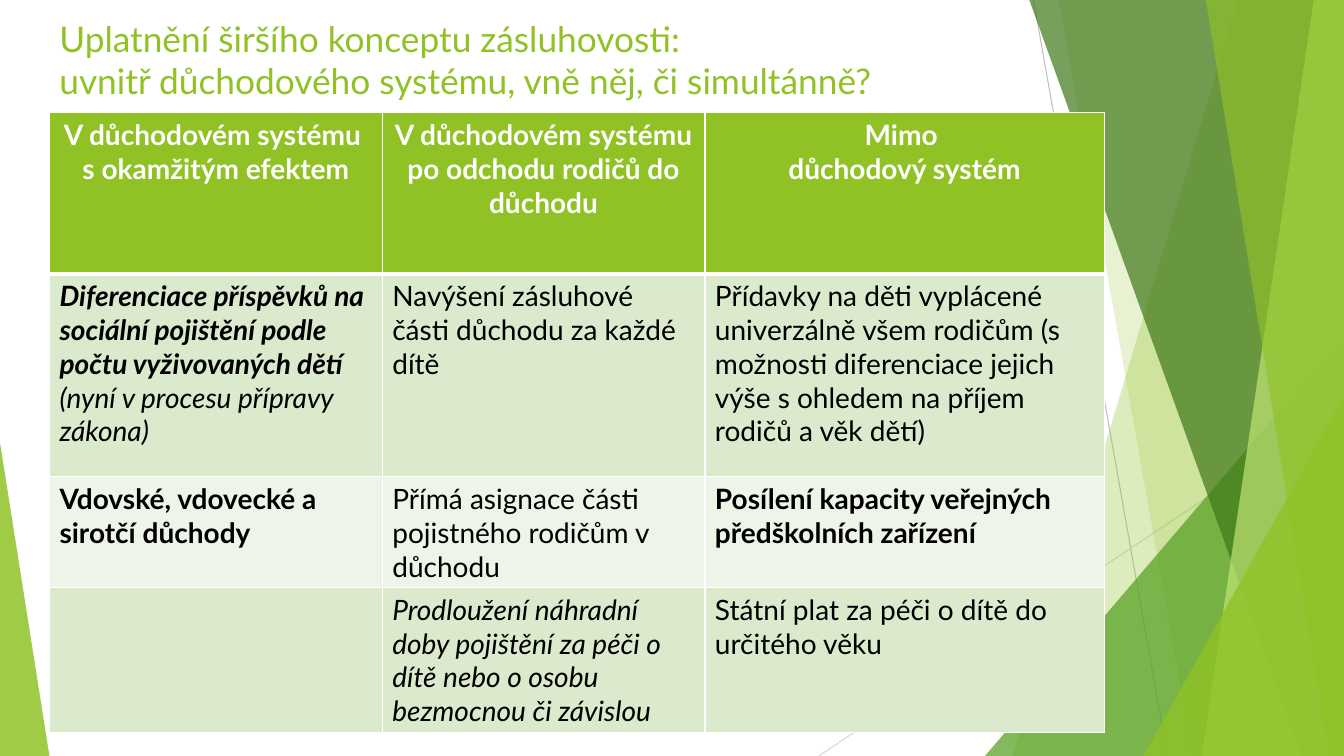
from lxml.etree import SubElement
from pptx import Presentation
from pptx.dml.color import RGBColor
from pptx.enum.shapes import MSO_CONNECTOR, MSO_SHAPE
from pptx.enum.text import MSO_ANCHOR, PP_ALIGN
from pptx.oxml import parse_xml
from pptx.oxml.ns import nsdecls, qn
from pptx.util import Inches, Pt

WIDE, HIGH = Inches(13.33), Inches(7.5)
FONT = "Lato"
HUES = {
    "lime": "90C226", "green": "54A021", "dark": "3F7819", "pale": "C0E474",
    "white": "FFFFFF", "black": "000000", "band": "DBE9CD", "light": "EEF4E8",
    "gray": "BFBFBF", "mist": "D9D9D9",
}

# Lines: from x, from y, to x, to y (percent of the slide), colour
LINES = [(76.9, 0, 86.87, 100, "gray"), (100, 53.73, 60.92, 100, "mist")]

# Shards run to the right edge: top x, bottom x, colour, opacity
BACK = [(92.12, 75.32, "lime", 30), (78.77, 88.75, "lime", 20)]
FRONT = [(76.59, 96.85, "dark", 70), (97.75, 89.42, "pale", 70),
         (89.72, 98.87, "lime", 65)]

# Table: column widths and row heights in percent of the slide
COLS = [24.76, 24.01, 29.71]
ROWS = [21.33, 26.8, 14.67, 19.2]
FILLS = ["lime", "band", "light", "band"]

# Cells: paragraphs as (text, style), style letters b = bold, i = italic
CELLS = [
    [[("V důchodovém systému ", "b"), ("s okamžitým efektem", "b")],
     [("V důchodovém systému ", "b"), ("po odchodu rodičů do důchodu", "b")],
     [("Mimo ", "b"), ("důchodový systém", "b")]],
    [[("Diferenciace příspěvků na sociální pojištění podle počtu "
       "vyživovaných dětí", "bi"),
      ("(nyní v procesu přípravy zákona)", "i")],
     [("Navýšení zásluhové části důchodu za každé dítě", "")],
     [("Přídavky na děti vyplácené univerzálně všem rodičům (s možnosti "
       "diferenciace jejich výše s ohledem na příjem rodičů a věk dětí)", "")]],
    [[("Vdovské, vdovecké a sirotčí důchody", "b")],
     [("Přímá asignace části pojistného rodičům v důchodu", "")],
     [("Posílení kapacity veřejných předškolních zařízení", "b")]],
    [[],
     [("Prodloužení náhradní doby pojištění za péči o dítě nebo o osobu "
       "bezmocnou či závislou", "i")],
     [("Státní plat za péči o dítě do určitého věku", "")]],
]


def across(share):
    return int(WIDE * share / 100)


def down(share):
    return int(HIGH * share / 100)


def hue(name):
    return RGBColor.from_string(HUES[name])


def style(para, size, tint, marks=""):
    for run in para.runs:
        font = run.font
        font.name, font.size = FONT, Pt(size)
        font.bold, font.italic = "b" in marks, "i" in marks
        font.color.rgb = hue(tint)


def paint(shape, tint, alpha):
    shape.shadow.inherit = False
    shape.line.fill.background()
    shape.fill.solid()
    shape.fill.fore_color.rgb = hue(tint)
    color = shape.fill._xPr.find(".//" + qn("a:srgbClr"))
    SubElement(color, qn("a:alpha")).set("val", str(alpha * 1000))


def line(slide, x1, y1, x2, y2, tint):
    link = slide.shapes.add_connector(
        MSO_CONNECTOR.STRAIGHT, across(x1), down(y1), across(x2), down(y2))
    link.line.color.rgb = hue(tint)
    link.line.width = Pt(0.75)
    SubElement(link._element.spPr, qn("a:effectLst"))


def shard(slide, top, base, tint, alpha):
    pen = slide.shapes.build_freeform(across(top), 0)
    pen.add_line_segments([(WIDE, 0), (WIDE, HIGH), (across(base), HIGH)])
    paint(pen.convert_to_shape(), tint, alpha)


def wedge(slide, left, top, wide, peak, tint, alpha):
    shape = slide.shapes.add_shape(
        MSO_SHAPE.ISOSCELES_TRIANGLE, across(left), down(top),
        across(wide), down(100 - top))
    shape.adjustments[0] = peak
    paint(shape, tint, alpha)


def title(slide, text):
    box = slide.shapes.add_textbox(
        across(3.68), down(1.6), across(95.5), down(7.2))
    frame = box.text_frame
    frame.word_wrap = True
    frame.vertical_anchor = MSO_ANCHOR.TOP
    frame.text = text
    style(frame.paragraphs[0], 25.2, "lime")


def border(cell, base):
    props = cell._tc.get_or_add_tcPr()
    for spot, (side, width) in enumerate(
            [("L", 1), ("R", 1), ("T", 1), ("B", base)]):
        props.insert(spot, parse_xml(
            f'<a:ln{side} {nsdecls("a")} w="{Pt(width)}"><a:solidFill>'
            f'<a:srgbClr val="{HUES["white"]}"/></a:solidFill></a:ln{side}>'))


def fill_cell(cell, paras, tint, head):
    cell.fill.solid()
    cell.fill.fore_color.rgb = hue(tint)
    border(cell, 3 if head else 1)
    cell.text_frame.text = "\n".join(text for text, _ in paras)
    for para, (_, marks) in zip(cell.text_frame.paragraphs, paras):
        para.alignment = PP_ALIGN.CENTER if head else PP_ALIGN.LEFT
        style(para, 20, "white" if head else "black", marks)


def table(slide):
    grid = slide.shapes.add_table(
        len(ROWS), len(COLS), across(3.68), down(14.93),
        across(sum(COLS)), down(sum(ROWS))).table
    for col, share in zip(grid.columns, COLS):
        col.width = across(share)
    for r, share in enumerate(ROWS):
        grid.rows[r].height = down(share)
        for c, paras in enumerate(CELLS[r]):
            fill_cell(grid.cell(r, c), paras, FILLS[r], r == 0)


def main():
    deck = Presentation()
    deck.slide_width, deck.slide_height = WIDE, HIGH
    slide = deck.slides.add_slide(deck.slide_layouts[6])

    # Backdrop, from back to front
    for item in LINES:
        line(slide, *item)
    for item in BACK:
        shard(slide, *item)
    wedge(slide, 73.29, 44.4, 26.71, 1, "green", 72)
    for item in FRONT:
        shard(slide, *item)
    wedge(slide, 85.07, 52.4, 14.93, 1, "lime", 80)
    wedge(slide, 0, 58.53, 3.68, 0, "lime", 85)

    # Content
    title(slide, "Uplatnění širšího konceptu zásluhovosti: \v"
                 "uvnitř důchodového systému, vně něj, či simultánně?")
    table(slide)
    deck.save("out.pptx")


if __name__ == "__main__":
    main()
